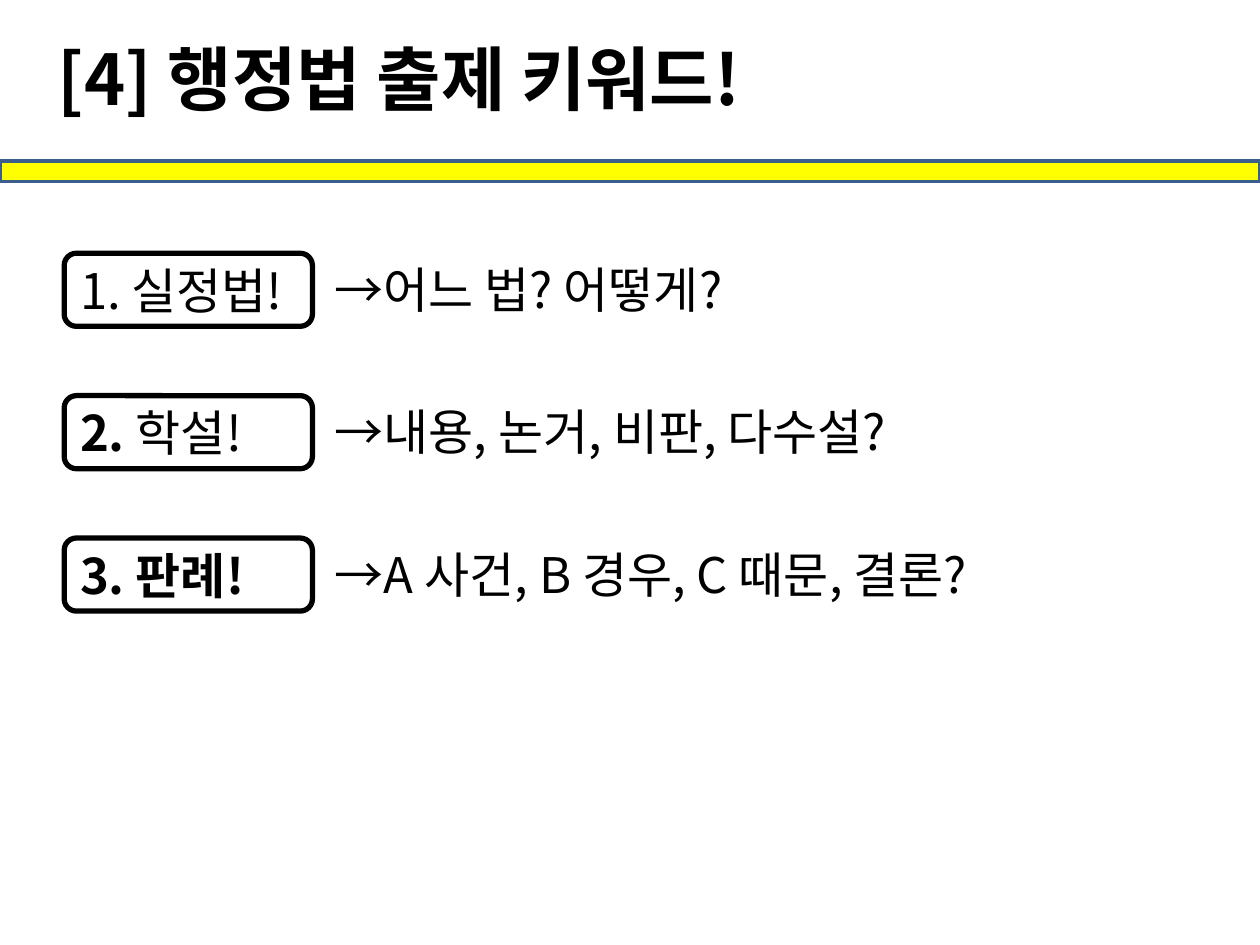
from dataclasses import dataclass

from lxml import etree
from pptx import Presentation
from pptx import util as u
from pptx.dml.color import RGBColor
from pptx.enum import shapes, text
from pptx.oxml import ns


@dataclass(frozen=True)
class Theme:
    font: str = "Noto Sans CJK KR"
    ink: RGBColor = RGBColor(0, 0, 0)
    band: RGBColor = RGBColor(0xFF, 0xFF, 0)
    band_edge: RGBColor = RGBColor(0x3A, 0x5F, 0x8C)
    title_size: int = 40
    body_size: int = 28


class KeywordSlide:
    """Draws the elements of a keyword slide in one theme."""

    def __init__(self, slide, theme):
        self.slide = slide
        self.theme = theme

    def set_text(self, frame, runs, size, anchor):
        frame.word_wrap = True
        frame.auto_size = text.MSO_AUTO_SIZE.NONE
        frame.vertical_anchor = anchor
        line = frame.paragraphs[0]
        line.alignment = text.PP_ALIGN.LEFT
        font = line.font
        font.name = self.theme.font
        font.size = u.Pt(size)
        font.color.rgb = self.theme.ink
        defaults = line._p.pPr.find(ns.qn("a:defRPr"))
        etree.SubElement(defaults, ns.qn("a:ea"), typeface=self.theme.font)
        if len({bold for _, bold in runs}) == 1:
            font.bold = runs[0][1]
        for words, bold in runs:
            run = line.add_run()
            run.text = words
            if font.bold is None:
                run.font.bold = bold

    def title(self, words, *box):
        heading = self.slide.shapes.title
        heading.left, heading.top, heading.width, heading.height = map(u.Inches, box)
        self.set_text(heading.text_frame, [(words, True)],
                      self.theme.title_size, text.MSO_ANCHOR.TOP)

    def outline(self, kind, box, color, weight):
        shape = self.slide.shapes.add_shape(kind, *map(u.Inches, box))
        shape.shadow.inherit = False
        shape.fill.background()
        shape.line.color.rgb = color
        shape.line.width = u.Pt(weight)
        return shape

    def band(self, *box):
        stripe = self.outline(shapes.MSO_SHAPE.RECTANGLE, box, self.theme.band_edge, 2)
        stripe.fill.solid()
        stripe.fill.fore_color.rgb = self.theme.band

    def keyword(self, runs, *box):
        frame = self.outline(shapes.MSO_SHAPE.ROUNDED_RECTANGLE, box,
                             self.theme.ink, 3).text_frame
        frame.margin_right = 0
        self.set_text(frame, runs, self.theme.body_size, text.MSO_ANCHOR.MIDDLE)

    def question(self, words, *box):
        note = self.slide.shapes.add_textbox(*map(u.Inches, box))
        self.set_text(note.text_frame, [(words, False)],
                      self.theme.body_size, text.MSO_ANCHOR.TOP)


def main():
    deck = Presentation()
    deck.slide_width, deck.slide_height = u.Inches(10), u.Inches(7.5)
    page = KeywordSlide(deck.slides.add_slide(deck.slide_layouts[5]), Theme())
    page.title("[4] 행정법 출제 키워드!", 0.36, 0.23, 8.19, 0.77)
    page.band(0, 1.28, 10, 0.16)

    rows = [
        ([("1. 실정법!", False)], "→어느 법? 어떻게?", 3.6),
        ([("2. ", True), ("학설!", False)], "→내용, 논거, 비판, 다수설?", 4.82),
        ([("3. 판례!", True)], "→A 사건, B 경우, C 때문, 결론?", 5.57),
    ]
    first_top, pitch = 2.01, 1.13
    for index, (keyword, question, width) in enumerate(rows):
        top = first_top + index * pitch
        page.keyword(keyword, 0.51, top, 1.97, 0.58)
        page.question(question, 2.56, top, width, 0.57)

    deck.save("out.pptx")


if __name__ == "__main__":
    main()
